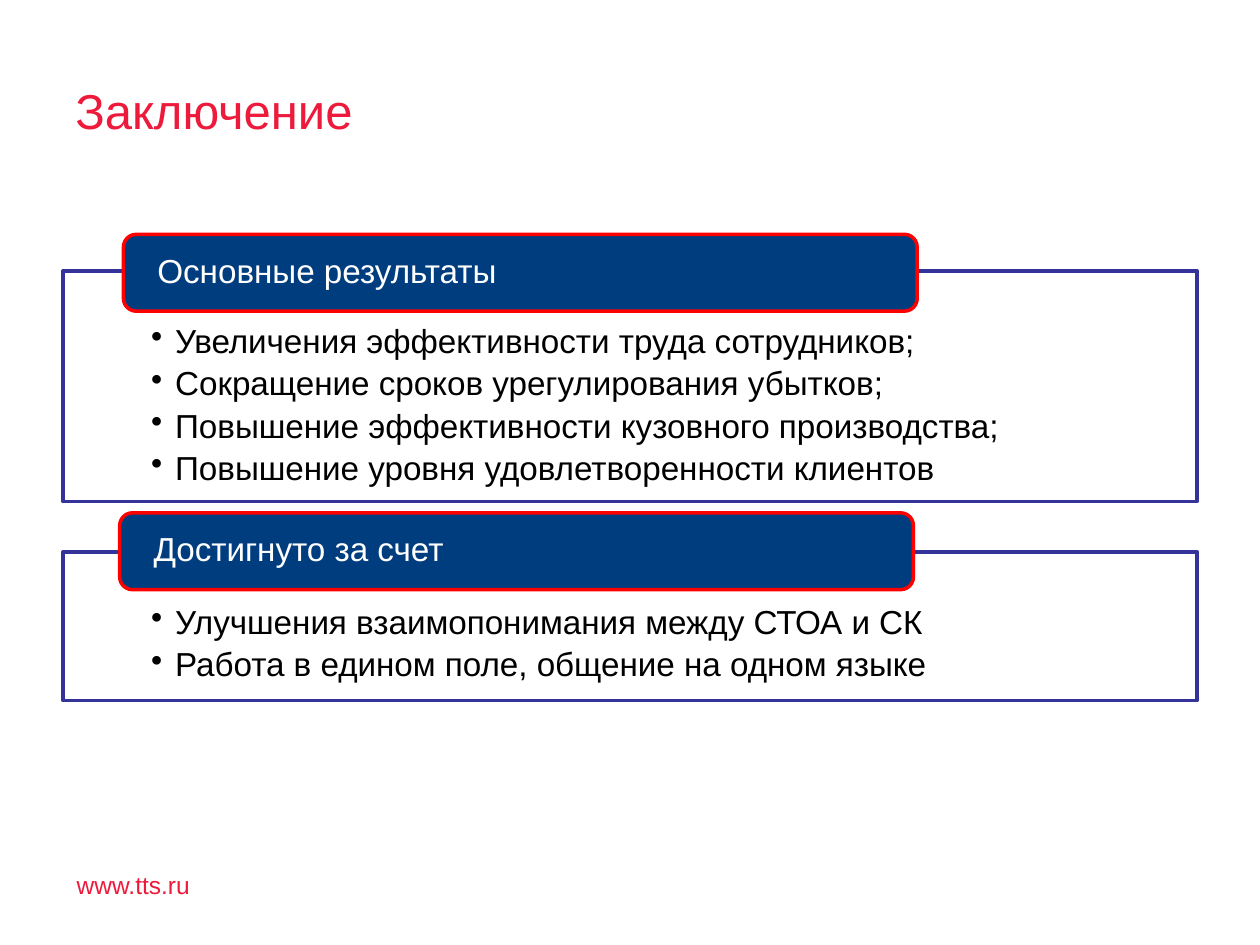
from dataclasses import dataclass

from pptx import Presentation
from pptx.dml.color import RGBColor
from pptx.enum.shapes import MSO_SHAPE as Preset
from pptx.enum.text import MSO_ANCHOR as Anchor, PP_ALIGN as Align
from pptx.oxml.ns import qn
from pptx.oxml.xmlchemy import OxmlElement
from pptx.shapes.autoshape import Shape
from pptx.slide import Slide
from pptx.text.text import TextFrame, _Paragraph as Paragraph
from pptx.util import Inches, Pt


@dataclass(frozen=True)
class Theme:
    font: str = "Arial"
    accent: str = "ED1A3B"
    header_fill: str = "003D7E"
    header_line: str = "FF0000"
    panel_line: str = "333399"
    white: str = "FFFFFF"
    black: str = "000000"
    title_size: float = 28
    body_size: float = 19
    footer_size: float = 14
    line_width: float = 2
    line_spacing: float = 0.9
    bullet_gap: float = 3.6
    panel_opacity: int = 90


@dataclass(frozen=True)
class Box:
    left: float
    top: float
    width: float
    height: float

    def lengths(self) -> tuple[Inches, ...]:
        return tuple(Inches(n) for n in (self.left, self.top, self.width, self.height))


@dataclass(frozen=True)
class Section:
    heading: str
    header: Box
    panel: Box
    points: tuple[str, ...]


THEME = Theme()
SECTIONS = (
    Section(
        "Основные результаты",
        Box(0.98, 1.86, 6.3, 0.61),
        Box(0.5, 2.15, 9, 1.83),
        (
            "Увеличения эффективности труда сотрудников;",
            "Сокращение сроков урегулирования убытков;",
            "Повышение эффективности кузовного производства;",
            "Повышение уровня удовлетворенности клиентов",
        ),
    ),
    Section(
        "Достигнуто за счет",
        Box(0.95, 4.07, 6.3, 0.61),
        Box(0.5, 4.38, 9, 1.18),
        (
            "Улучшения взаимопонимания между СТОА и СК",
            "Работа в едином поле, общение на одном языке",
        ),
    ),
)


def set_frame(frame: TextFrame, anchor: Anchor, side: float, top: float, bottom: float) -> None:
    frame.word_wrap = True
    frame.vertical_anchor = anchor
    frame.margin_left = frame.margin_right = Inches(side)
    frame.margin_top = Inches(top)
    frame.margin_bottom = Inches(bottom)


def add_text(paragraph: Paragraph, text: str, size: float, color: str) -> None:
    paragraph.alignment = Align.LEFT
    run = paragraph.add_run()
    run.text = text
    run.font.name = THEME.font
    run.font.size = Pt(size)
    run.font.color.rgb = RGBColor.from_string(color)


def add_bullet(paragraph: Paragraph) -> None:
    properties = paragraph._p.get_or_add_pPr()
    properties.set("marL", str(Inches(0.19)))
    properties.set("indent", str(Inches(-0.19)))
    bullet = OxmlElement("a:buChar")
    bullet.set("char", "•")
    properties.append(bullet)


def add_label(slide: Slide, box: Box, text: str, size: float) -> None:
    frame = slide.shapes.add_textbox(*box.lengths()).text_frame
    set_frame(frame, Anchor.MIDDLE, 0.1, 0, 0)
    add_text(frame.paragraphs[0], text, size, THEME.accent)


def add_box(slide: Slide, preset: Preset, box: Box, fill: str, line: str) -> Shape:
    shape = slide.shapes.add_shape(preset, *box.lengths())
    shape.shadow.inherit = False
    shape.fill.solid()
    shape.fill.fore_color.rgb = RGBColor.from_string(fill)
    shape.line.color.rgb = RGBColor.from_string(line)
    shape.line.width = Pt(THEME.line_width)
    return shape


def set_opacity(shape: Shape, percent: int) -> None:
    color = shape._element.spPr.find(qn("a:solidFill")).find(qn("a:srgbClr"))
    alpha = OxmlElement("a:alpha")
    alpha.set("val", str(percent * 1000))
    color.append(alpha)


def add_section(slide: Slide, section: Section) -> None:
    panel = add_box(slide, Preset.RECTANGLE, section.panel, THEME.white, THEME.panel_line)
    set_opacity(panel, THEME.panel_opacity)
    frame = panel.text_frame
    set_frame(frame, Anchor.TOP, 0.7, 0.43, 0.15)
    for index, point in enumerate(section.points):
        paragraph = frame.add_paragraph() if index else frame.paragraphs[0]
        add_bullet(paragraph)
        paragraph.line_spacing = THEME.line_spacing
        paragraph.space_after = Pt(THEME.bullet_gap)
        add_text(paragraph, point, THEME.body_size, THEME.black)

    header = add_box(
        slide, Preset.ROUNDED_RECTANGLE, section.header, THEME.header_fill, THEME.header_line
    )
    set_frame(header.text_frame, Anchor.MIDDLE, 0.24, 0, 0)
    paragraph = header.text_frame.paragraphs[0]
    paragraph.line_spacing = THEME.line_spacing
    add_text(paragraph, section.heading, THEME.body_size, THEME.white)


def main() -> None:
    presentation = Presentation()
    presentation.slide_width = Inches(10)
    presentation.slide_height = Inches(7.5)
    slide = presentation.slides.add_slide(presentation.slide_layouts[6])
    add_label(slide, Box(0.51, 6.9, 1.89, 0.24), "www.tts.ru", THEME.footer_size)
    add_label(slide, Box(0.5, 0.44, 9, 0.87), "Заключение", THEME.title_size)
    for section in SECTIONS:
        add_section(slide, section)
    presentation.save("out.pptx")


if __name__ == "__main__":
    main()
